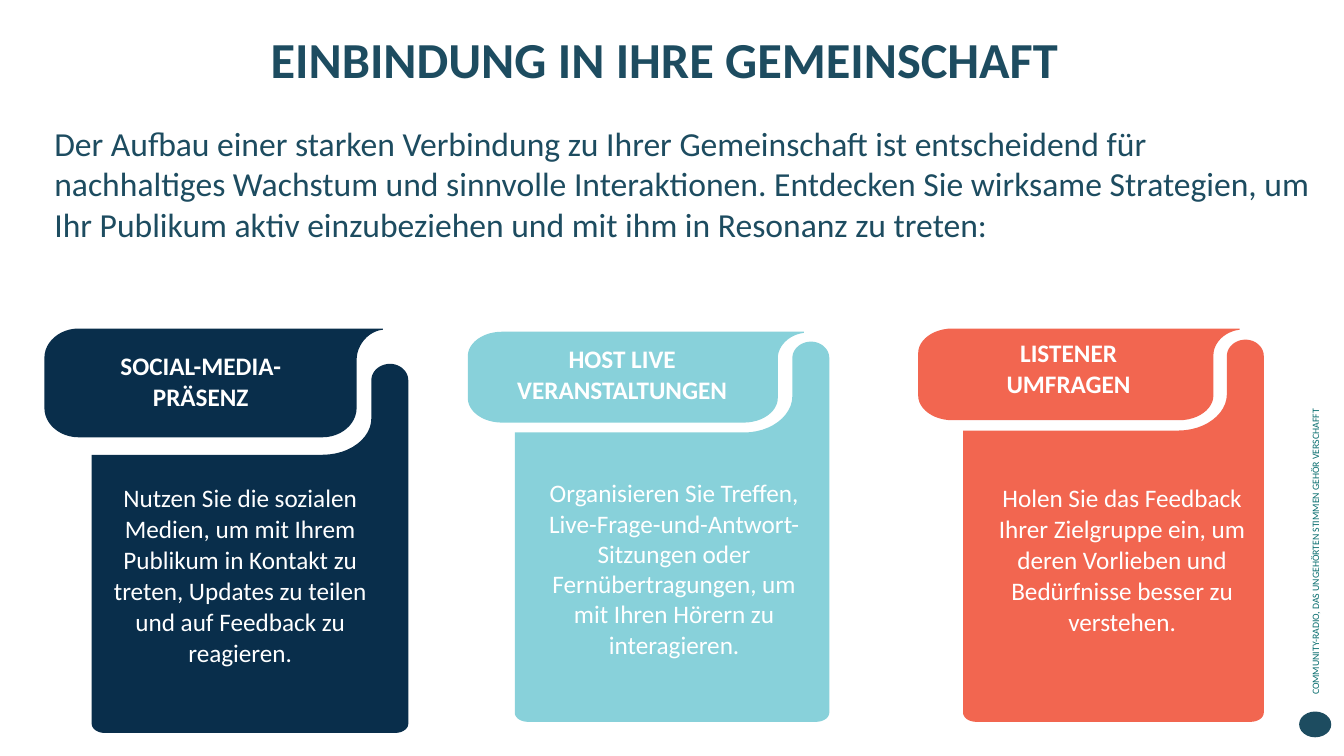
import dataclasses

import pptx
import pptx.dml.color
import pptx.enum.shapes
import pptx.enum.text
import pptx.util

Cm = pptx.util.Cm
ALIGN = pptx.enum.text.PP_ALIGN
FONT = "Calibri"
COLOURS = {
    "heading": "1D4C60",
    "navy": "092E4B",
    "aqua": "88D1DA",
    "coral": "F26650",
    "tagline": "066C6D",
    "white": "FFFFFF",
}


@dataclasses.dataclass
class Card:
    box: tuple  # left, top, width, height in cm
    colour: str
    banner_height: float
    body_drop: float
    label_offset: tuple
    label: list
    text_offset: tuple
    text_width: float
    text: str
    line_spacing: float = 1.0


CARDS = [
    Card((1.12, 8.28, 9.17, 10.19), "navy", 2.74, 0.89,
         (1.09, 0.56), ["SOCIAL-MEDIA-PRÄSENZ"], (1.14, 3.71), 7.59,
         "Nutzen Sie die sozialen Medien, um mit Ihrem Publikum in Kontakt "
         "zu treten, Updates zu teilen und auf Feedback zu reagieren.", 1.03),
    Card((11.79, 8.36, 9.11, 9.83), "aqua", 2.29, 0.25,
         (1.04, 0.3), ["HOST LIVE", "VERANSTALTUNGEN"], (1.44, 3.55), 7.52,
         "Organisieren Sie Treffen, Live-Frage-und-Antwort-Sitzungen oder "
         "Fernübertragungen, um mit Ihren Hörern zu interagieren."),
    Card((23.14, 8.28, 8.71, 9.91), "coral", 2.31, 0.28,
         (0.94, 0.23), ["LISTENER", "UMFRAGEN"], (1.57, 3.71), 7.14,
         "Holen Sie das Feedback Ihrer Zielgruppe ein, um deren Vorlieben "
         "und Bedürfnisse besser zu verstehen.", 1.03),
]


def rgb(name):
    return pptx.dml.color.RGBColor.from_string(COLOURS[name])


def place(shape, box):
    shape.left, shape.top, shape.width, shape.height = map(Cm, box)


def paint(shape, colour):
    shape.shadow.inherit = False
    shape.fill.solid()
    shape.fill.fore_color.rgb = rgb(colour)
    shape.line.fill.background()


def write(shape, lines, size, colour, bold=False, align=ALIGN.LEFT,
          spacing=1.0, margins=(0.25, 0.13)):
    frame = shape.text_frame
    frame.word_wrap = True
    frame.auto_size = pptx.enum.text.MSO_AUTO_SIZE.NONE
    frame.vertical_anchor = pptx.enum.text.MSO_ANCHOR.TOP
    frame.margin_left = frame.margin_right = Cm(margins[0])
    frame.margin_top = frame.margin_bottom = Cm(margins[1])
    for index, line in enumerate(lines):
        para = frame.paragraphs[0] if index == 0 else frame.add_paragraph()
        para.alignment = align
        para.line_spacing = spacing
        span = para.add_run()
        span.text = line
        span.font.name = FONT
        span.font.size = pptx.util.Pt(size)
        span.font.bold = bold
        span.font.color.rgb = rgb(colour)


def add_text(page, box, lines, size, colour, **style):
    shape = page.shapes.add_textbox(*map(Cm, box))
    write(shape, lines, size, colour, **style)
    return shape


def arc(start, corner, end, steps=12):
    """Points of a rounded corner, as a cubic curve towards the corner."""
    pull = 0.55
    first = [s + pull * (c - s) for s, c in zip(start, corner)]
    second = [e + pull * (c - e) for e, c in zip(end, corner)]
    points = []
    for step in range(steps + 1):
        t = step / steps
        u = 1 - t
        points.append(tuple(
            u**3 * a + 3 * u * u * t * b + 3 * u * t * t * c + t**3 * d
            for a, b, c, d in zip(start, first, second, end)))
    return points


def add_outline(page, points, colour):
    points = [(Cm(x), Cm(y)) for x, y in points]
    builder = page.shapes.build_freeform(*points[0])
    builder.add_line_segments(points[1:], close=True)
    paint(builder.convert_to_shape(), colour)


def add_body(page, box, colour):
    """Panel with a round-topped column rising at its right side."""
    left, top, width, height = box
    right, bottom = left + width, top + height
    column, peak = right - 0.93, right - 0.46
    shoulder, step = top + 0.41, top + 2.29
    bend = top + 1.37
    round_x, round_y = 0.33, 0.23
    points = [
        *arc((peak, top), (column, top), (column, shoulder)),
        *arc((column, bend), (column, step), (column - 1.22, step)),
        (left, step),
        *arc((left, bottom - round_y), (left, bottom), (left + round_x, bottom)),
        *arc((right - round_x, bottom), (right, bottom), (right, bottom - round_y)),
        *arc((right, shoulder), (right, top), (peak, top)),
    ]
    add_outline(page, points, colour)


def add_banner(page, box, colour):
    """Rounded heading band whose upper right corner flares outwards."""
    left, top, width, height = box
    right, bottom = left + width, top + height
    edge = right - 0.66
    round_x, round_y = 0.86, 0.27 * height
    points = [
        *arc((left + round_x, top), (left, top), (left, top + round_y)),
        *arc((left, bottom - round_y), (left, bottom), (left + round_x, bottom)),
        *arc((edge - round_x, bottom), (edge, bottom), (edge, bottom - round_y)),
        *arc((edge, top + 0.29 * height), (edge, top + 0.1), (right, top + 0.03)),
        (right, top),
    ]
    add_outline(page, points, colour)


def add_card(page, card):
    left, top, width, height = card.box
    inset = 0.13 * width
    add_body(page, (left + inset, top + card.body_drop,
                    width - inset, height - card.body_drop), card.colour)
    add_banner(page, (left, top, 0.93 * width, card.banner_height), card.colour)
    dx, dy = card.label_offset
    add_text(page, (left + dx, top + dy, 5.7, 1.55), card.label, 18, "white",
             bold=True, align=ALIGN.CENTER, margins=(0, 0))
    dx, dy = card.text_offset
    add_text(page, (left + dx, top + dy, card.text_width, 3.4), [card.text], 18,
             "white", align=ALIGN.CENTER, spacing=card.line_spacing)


def add_heading(page, box):
    left, top, width, height = box
    title = page.shapes.title
    place(title, (left + 2.13, top, 27, 3.61))
    write(title, ["EINBINDUNG IN IHRE GEMEINSCHAFT"], 36, "heading",
          bold=True, align=ALIGN.CENTER, spacing=0.9)
    add_text(page, (left, top + 2.23, width, height - 2.23), [
        "Der Aufbau einer starken Verbindung zu Ihrer Gemeinschaft ist "
        "entscheidend für nachhaltiges Wachstum und sinnvolle Interaktionen. "
        "Entdecken Sie wirksame Strategien, um Ihr Publikum aktiv "
        "einzubeziehen und mit ihm in Resonanz zu treten:"], 24, "heading")


def add_side_strip(page, box):
    """Upright tagline with a plain badge below it."""
    left, top, width, height = box
    length, thickness = 11.33, 0.56
    middle = left + width / 2
    tagline = add_text(
        page, (middle - length / 2, top + (length - thickness) / 2, length, thickness),
        ["COMMUNITY-RADIO, DAS UNGEHÖRTEN STIMMEN GEHÖR VERSCHAFFT"], 7, "tagline")
    tagline.rotation = 270
    badge = page.shapes.add_shape(
        pptx.enum.shapes.MSO_SHAPE.OVAL,
        *map(Cm, (left, top + height - 0.79, width, 0.65)))
    paint(badge, "heading")


def main():
    deck = pptx.Presentation()
    deck.slide_width, deck.slide_height = Cm(33.87), Cm(19.05)
    page = deck.slides.add_slide(deck.slide_layouts[5])
    add_heading(page, (1.12, 0.74, 32.28, 5.56))
    for card in CARDS:
        add_card(page, card)
    add_side_strip(page, (32.74, 6.43, 0.81, 12.29))
    deck.save("out.pptx")


if __name__ == "__main__":
    main()
